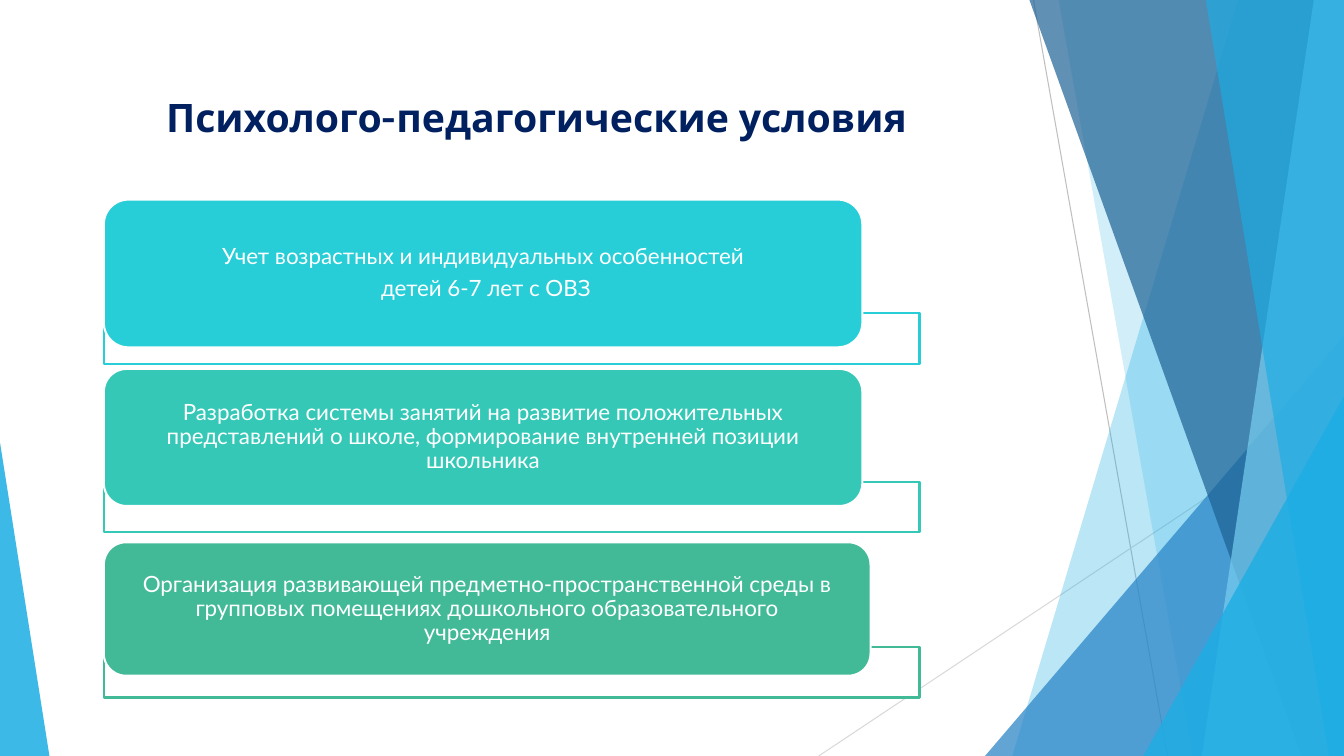
from lxml.etree import SubElement
from pptx import Presentation
from pptx.dml.color import RGBColor
from pptx.enum.shapes import MSO_CONNECTOR, MSO_SHAPE
from pptx.enum.text import MSO_ANCHOR, PP_ALIGN
from pptx.oxml.ns import qn
from pptx.util import Inches, Pt

W, H = 13.33, 7.5
WHITE = RGBColor(0xFF, 0xFF, 0xFF)
NAVY = RGBColor(0x00, 0x20, 0x60)
GREY = RGBColor(0xBF, 0xBF, 0xBF)
PALE_GREY = RGBColor(0xD9, 0xD9, 0xD9)
SKY = RGBColor(0x1C, 0xAD, 0xE4)
PALE_SKY = RGBColor(0x77, 0xCE, 0xEF)
BLUE = RGBColor(0x26, 0x83, 0xC6)
DEEP_BLUE = RGBColor(0x1D, 0x62, 0x94)
CYAN = RGBColor(0x27, 0xCE, 0xD7)
TEAL = RGBColor(0x35, 0xC8, 0xB7)
GREEN = RGBColor(0x42, 0xBA, 0x97)

RAYS = [((10.25, 0), (11.58, H), GREY), ((W, 4.03), (8.12, H), PALE_GREY)]
BACK_FACETS = [(12.28, 10.04, SKY, 30), (10.5, 11.83, SKY, 20)]
FRONT_FACETS = [(10.21, 12.91, DEEP_BLUE, 70), (13.03, 11.92, PALE_SKY, 70),
                (11.96, 13.18, SKY, 65)]
CARDS = [
    (1.98, 1.63, 0.93, 0.9, CYAN,
     ["Учет возрастных и индивидуальных особенностей", " детей 6-7 лет с ОВЗ"]),
    (3.66, 1.62, 0.93, 0.84, TEAL,
     ["Разработка системы занятий на развитие положительных представлений "
      "о школе, формирование внутренней позиции школьника"]),
    (5.38, 1.54, 0.94, 0.86, GREEN,
     ["Организация развивающей предметно-пространственной среды в групповых "
      "помещениях дошкольного образовательного учреждения"]),
]


def style(sp, fill, alpha=100, line=None):
    """Set the fill, its opacity in percent and the outline of a shape."""
    sp.shadow.inherit = False
    sp.fill.solid()
    sp.fill.fore_color.rgb = fill
    if alpha < 100:
        clr = sp.fill._xPr.find(qn("a:solidFill"))[0]
        SubElement(clr, qn("a:alpha")).set("val", str(alpha * 1000))
    if line is None:
        sp.line.fill.background()
    else:
        sp.line.color.rgb = line
        sp.line.width = Pt(1.5)


def add_preset(s, kind, x, y, w, h, fill, alpha=100, line=None):
    """Add a styled preset shape, measured in inches."""
    sp = s.shapes.add_shape(kind, Inches(x), Inches(y), Inches(w), Inches(h))
    style(sp, fill, alpha, line)
    return sp


def write(tf, lines, *, font, size, color, bold=False, spacing=1.0, after=0, indent=0):
    """Write centred paragraphs into a text frame."""
    tf.word_wrap = True
    for i, text in enumerate(lines):
        p = tf.paragraphs[0] if i == 0 else tf.add_paragraph()
        p.alignment = PP_ALIGN.CENTER
        p.line_spacing = spacing
        p.space_after = Pt(after)
        if indent:
            p._p.get_or_add_pPr().set("indent", str(Inches(indent)))
        r = p.add_run()
        r.text = text
        r.font.name = font
        r.font.size = Pt(size)
        r.font.bold = bold
        r.font.color.rgb = color


def add_ray(s, start, end, color):
    """Draw one thin background line."""
    c = s.shapes.add_connector(MSO_CONNECTOR.STRAIGHT, *map(Inches, start + end))
    c.line.color.rgb = color
    c.line.width = Pt(0.75)
    SubElement(c._element.spPr, qn("a:effectLst"))


def add_facet(s, top, bottom, fill, alpha):
    """Draw a full-height facet from a slanted left side to the slide's right edge."""
    fb = s.shapes.build_freeform(Inches(top), 0, scale=Inches(1))
    fb.add_line_segments([(W, 0), (W, H), (bottom, H), (top, 0)])
    fb = s.shapes.build_freeform(Inches(top), 0)
    fb.add_line_segments([(Inches(x), Inches(y)) for x, y in [(W, 0), (W, H), (bottom, H)]])
    style(fb.convert_to_shape(), fill, alpha)


def add_corner(s, x, y, w, apex, fill, alpha):
    """Draw a triangle standing on the slide's bottom edge."""
    sp = add_preset(s, MSO_SHAPE.ISOSCELES_TRIANGLE, x, y, w, H - y, fill, alpha)
    sp.adjustments[0] = apex


def add_backdrop(s):
    """Draw the rays and translucent facets of the background."""
    for ray in RAYS:
        add_ray(s, *ray)
    for facet in BACK_FACETS:
        add_facet(s, *facet)
    add_corner(s, 9.77, 3.33, W - 9.77, 1, BLUE, 72)
    for facet in FRONT_FACETS:
        add_facet(s, *facet)
    add_corner(s, 11.34, 3.93, W - 11.34, 1, SKY, 80)
    add_corner(s, 0, 4.39, 0.49, 0, SKY, 85)


def add_title(s, x, y, w, h, text):
    """Place the slide title in its box."""
    tb = s.shapes.add_textbox(Inches(x), Inches(y), Inches(w), Inches(h))
    write(tb.text_frame, [text], font="Karla", size=28, color=NAVY, bold=True,
          spacing=1.5, indent=0.49)


def add_card(s, x, y, w, h, card_w, card_h, color, lines):
    """Place a rounded card over the outlined bar at the foot of its box."""
    bar_h = 0.5
    add_preset(s, MSO_SHAPE.RECTANGLE, x, y + h - bar_h, w, bar_h, WHITE, 90, color)
    sp = add_preset(s, MSO_SHAPE.ROUNDED_RECTANGLE, x, y, w * card_w, h * card_h,
                    color, line=WHITE)
    tf = sp.text_frame
    tf.margin_left = tf.margin_right = Inches(0.21)
    tf.margin_top = tf.margin_bottom = 0
    tf.vertical_anchor = MSO_ANCHOR.MIDDLE
    write(tf, lines, font="Lato", size=16, color=WHITE, spacing=0.9, after=5.6)


def main():
    """Build the slide and save it."""
    prs = Presentation()
    prs.slide_width, prs.slide_height = Inches(W), Inches(H)
    s = prs.slides.add_slide(prs.slide_layouts[6])
    add_backdrop(s)
    add_title(s, 0.28, 0.64, 9.59, 1.21, "Психолого-педагогические условия")
    for y, h, *card in CARDS:
        add_card(s, 1.03, y, 8.09, h, *card)
    prs.save("out.pptx")


if __name__ == "__main__":
    main()
